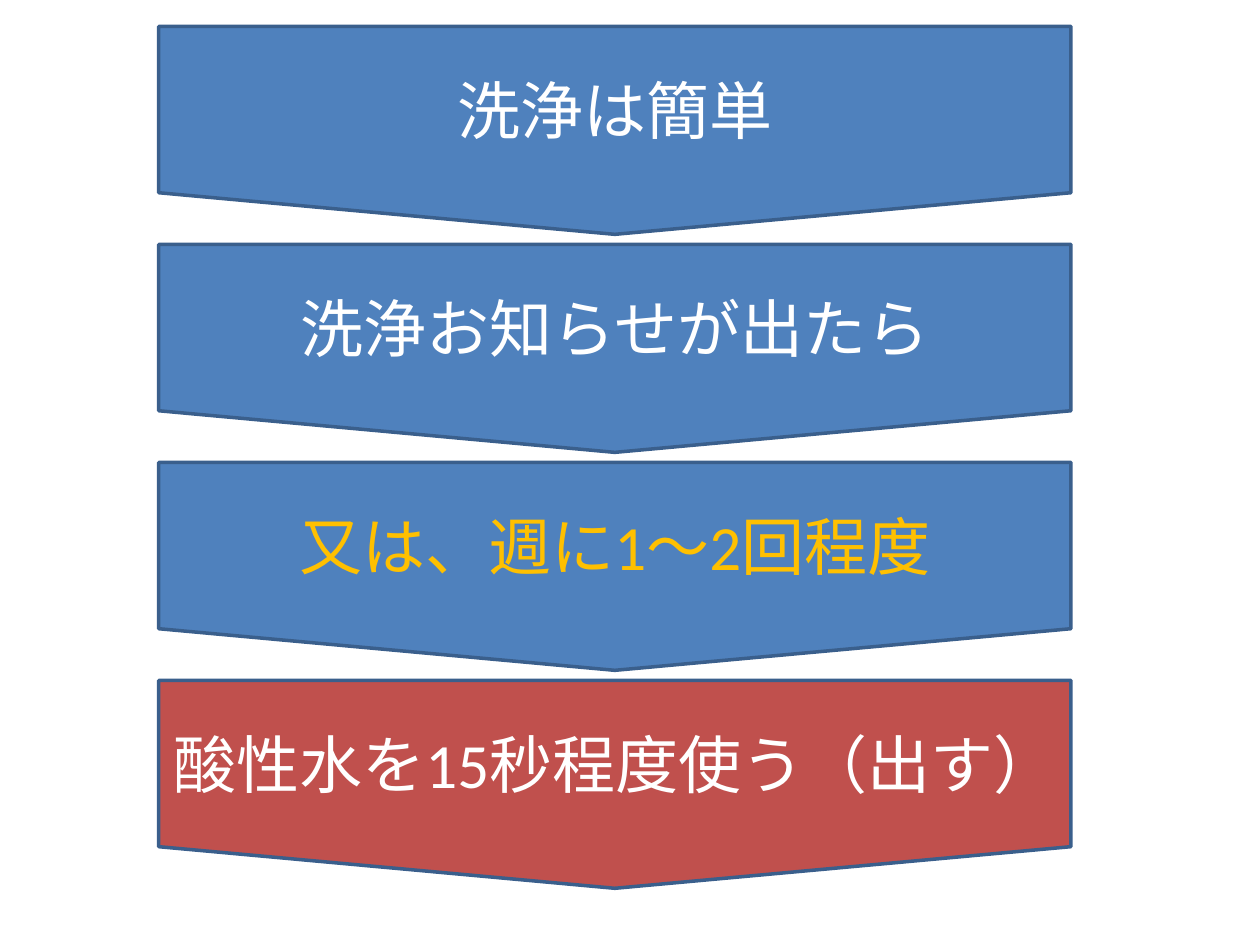
from pptx import Presentation
from pptx.dml.color import RGBColor
from pptx.enum.shapes import MSO_SHAPE
from pptx.enum.text import MSO_ANCHOR, PP_ALIGN
from pptx.util import Inches, Pt

# text, fill, text colour
STEPS = [
    ("洗浄は簡単", "blue", "white"),
    ("洗浄お知らせが出たら", "blue", "white"),
    ("又は、週に1～2回程度", "blue", "gold"),
    ("酸性水を15秒程度使う（出す）", "red", "white"),
]
THEME = {
    "blue": RGBColor.from_string("4F81BD"),
    "red": RGBColor.from_string("C0504D"),
    "white": RGBColor.from_string("FFFFFF"),
    "gold": RGBColor.from_string("FFC000"),
    "outline": RGBColor.from_string("3A5F8C"),
    "line_width": Pt(2),
    "font": {"name": "Calibri", "size": Pt(36)},
}
LEFT, TOP, WIDTH, HEIGHT = 1.26, 0.21, 7.24, 1.65
PITCH = 1.73


def add_step(s, index, text, fill, color):
    sp = s.shapes.add_shape(
        MSO_SHAPE.FLOWCHART_OFFPAGE_CONNECTOR,
        Inches(LEFT), Inches(TOP + index * PITCH), Inches(WIDTH), Inches(HEIGHT))
    sp.shadow.inherit = False
    sp.fill.solid()
    sp.fill.fore_color.rgb = THEME[fill]
    sp.line.color.rgb = THEME["outline"]
    sp.line.width = THEME["line_width"]

    tf = sp.text_frame
    tf.word_wrap = True
    tf.vertical_anchor = MSO_ANCHOR.MIDDLE
    p = tf.paragraphs[0]
    p.alignment = PP_ALIGN.CENTER
    r = p.add_run()
    r.text = text
    for name, value in THEME["font"].items():
        setattr(r.font, name, value)
    r.font.color.rgb = THEME[color]


def main():
    prs = Presentation()
    prs.slide_width, prs.slide_height = Inches(10), Inches(7.5)
    s = prs.slides.add_slide(prs.slide_layouts[6])
    for index, step in enumerate(STEPS):
        add_step(s, index, *step)
    prs.save("out.pptx")


if __name__ == "__main__":
    main()
